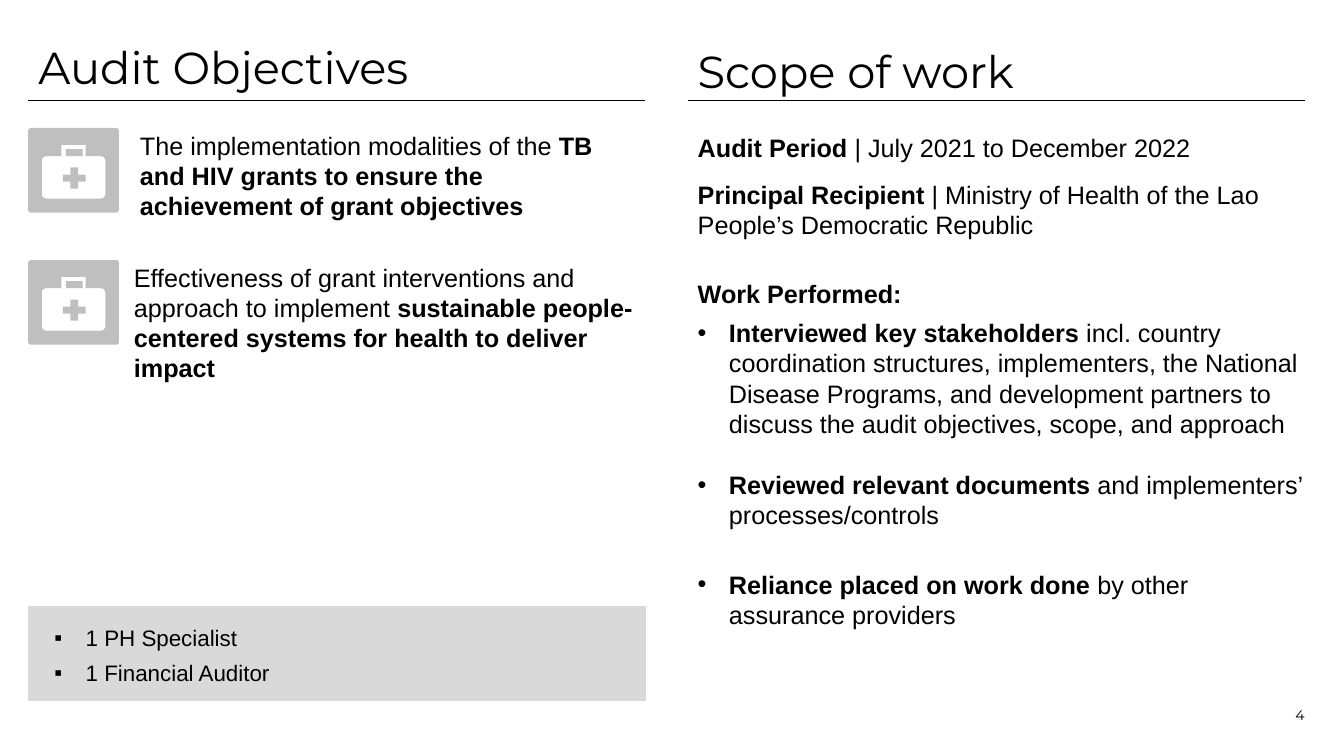
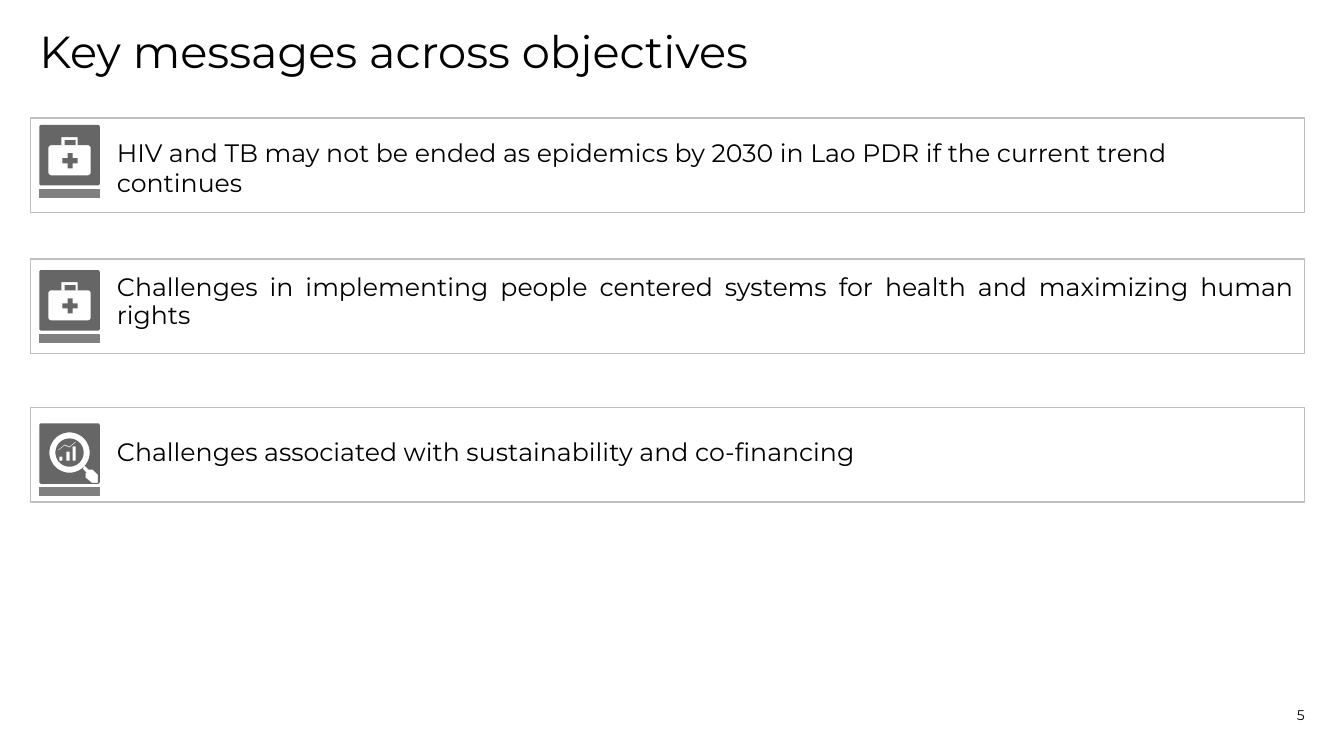
from math import cos, pi, sin

from lxml.etree import SubElement
from pptx import Presentation
from pptx.dml.color import RGBColor
from pptx.enum.shapes import MSO_CONNECTOR, MSO_SHAPE
from pptx.enum.text import MSO_ANCHOR, MSO_AUTO_SIZE, PP_ALIGN
from pptx.oxml.ns import qn
from pptx.util import Emu, Pt

PX = 9144  # EMU per px: 100 px to the inch
ICON_GRID = 60


def color(hex_code):
    return RGBColor.from_string(hex_code)


def px(*lengths):
    return [Emu(length * PX) for length in lengths]


def set_values(target, values):
    for name, value in values.items():
        setattr(target, name, value)


def rectangle(left, top, right, bottom):
    return [(left, top), (right, top), (right, bottom), (left, bottom)]


def arc(x, y, radius, start=0, sweep=360, steps=48):
    angles = [(start + sweep * step / steps) * pi / 180 for step in range(steps + 1)]
    return [(x + radius * cos(angle), y + radius * sin(angle)) for angle in angles]


def rounded(left, top, right, bottom, radius):
    corners = rectangle(left + radius, top + radius, right - radius, bottom - radius)
    return [point for number, (x, y) in enumerate(corners)
            for point in arc(x, y, radius, 180 + 90 * number, 90, 6)]


ICON_FRAME = rounded(0, 0, 60, 60, 2)
MEDICAL_CASE = [
    ICON_FRAME,
    rounded(9, 20, 51, 50, 3),
    rectangle(22, 12, 38, 20),
    rectangle(25, 15, 36, 20),
    [(28, 28), (33, 28), (33, 33), (38, 33), (38, 38), (33, 38),
     (33, 43), (28, 43), (28, 38), (23, 38), (23, 33), (28, 33)],
]
MAGNIFIER = [
    ICON_FRAME,
    arc(30, 29, 20),
    arc(30, 29, 14),
    [(43, 45), (47, 49), (46, 49), (46, 54), (52, 59), (58, 59),
     (58, 51), (53, 46), (49, 46), (45, 42)],
    rectangle(20, 33, 23, 37),
    rectangle(27, 28, 30, 37),
    rectangle(33, 23, 36, 37),
    [(36, 18), (30, 23), (25, 21), (19, 26), (19, 27), (25, 22), (30, 24), (36, 19)],
]


class Slides:
    """Holds the shared style and the slide being filled."""

    black = "000000"
    heading_font = "Montserrat"
    text_font = "Arial"
    heading = {"font": heading_font, "size": 32, "line_spacing": 0.9}
    margins = (10, 5, 10, 5)

    def __init__(self, width, height):
        self.deck = Presentation()
        set_values(self.deck, dict(zip(("slide_width", "slide_height"), px(width, height))))

    def new_page(self, layout, number):
        self.page = self.deck.slides.add_slide(self.deck.slide_layouts[layout])
        self.text((1196, 678, 98, 40), [number], margins=(0, 0, 0, 0),
                  anchor=MSO_ANCHOR.BOTTOM, font=self.heading_font, size=10,
                  alignment=PP_ALIGN.RIGHT)

    def fill_text(self, box, paragraphs, margins=margins, anchor=MSO_ANCHOR.TOP,
                  font=text_font, size=18, **spacing):
        """Fill a box; a paragraph is a string, or a string with its own format.

        Text between double asterisks is bold.
        """
        frame = box.text_frame
        sides = ("margin_left", "margin_top", "margin_right", "margin_bottom")
        set_values(frame, {"word_wrap": True, "auto_size": MSO_AUTO_SIZE.NONE,
                           "vertical_anchor": anchor, **dict(zip(sides, px(*margins)))})
        for number, item in enumerate(paragraphs):
            content, own = (item, {}) if isinstance(item, str) else item
            para = frame.paragraphs[0] if number == 0 else frame.add_paragraph()
            values = {"alignment": PP_ALIGN.LEFT, "line_spacing": 1.0,
                      "space_before": Pt(0), "space_after": Pt(0), **spacing, **own}
            self.bullet(para, values.pop("bullet", None))
            set_values(para, values)
            for part, words in enumerate(content.split("**")):
                if words:
                    span = para.add_run()
                    span.text = words
                    set_values(span.font, {"name": font, "size": Pt(size), "bold": part % 2 == 1})
                    span.font.color.rgb = color(self.black)

    def bullet(self, para, mark):
        properties = para._p.get_or_add_pPr()
        indent = 31 * PX if mark else 0
        properties.set("marL", str(indent))
        properties.set("indent", str(-indent))
        if mark:
            SubElement(properties, qn("a:buChar")).set("char", mark)
        else:
            SubElement(properties, qn("a:buNone"))

    def text(self, place, paragraphs, **style):
        self.fill_text(self.page.shapes.add_textbox(*px(*place)), paragraphs, **style)

    def placeholder(self, index, place, paragraphs, **style):
        """Move a layout placeholder, bring it to the front and fill it."""
        box = self.page.placeholders[index]
        set_values(box, dict(zip(("left", "top", "width", "height"), px(*place))))
        self.page.shapes._spTree.append(box._element)
        self.fill_text(box, paragraphs, **style)

    def title(self, place, words, **style):
        self.placeholder(0, place, [words], **self.heading, **style)

    def panel(self, place, line, fill=None):
        box = self.page.shapes.add_shape(MSO_SHAPE.RECTANGLE, *px(*place))
        box.shadow.inherit = False
        if fill:
            box.fill.solid()
            box.fill.fore_color.rgb = color(fill)
        else:
            box.fill.background()
        box.line.color.rgb = color(line)
        box.line.width = Pt(1)

    def rule(self, left, top, width, line, weight):
        rule = self.page.shapes.add_connector(
            MSO_CONNECTOR.STRAIGHT, *px(left, top, left + width, top))
        rule.line.color.rgb = color(line)
        rule.line.width = Pt(weight)
        SubElement(rule._element.spPr, qn("a:effectLst"))

    def icon(self, place, outlines, fill):
        """Draw nested outlines as one shape, each inner outline cut from the outer."""
        left, top, width, height = place
        builder = None
        for outline in outlines:
            points = [((left + x * width / ICON_GRID) * PX, (top + y * height / ICON_GRID) * PX)
                      for x, y in outline]
            if builder is None:
                builder = self.page.shapes.build_freeform(*points[0], scale=1.0)
            else:
                builder.move_to(*points[0])
            builder.add_line_segments(points[1:], close=True)
        shape = builder.convert_to_shape()
        shape.shadow.inherit = False
        shape.fill.solid()
        shape.fill.fore_color.rgb = color(fill)
        shape.line.fill.background()


def build_objectives_and_scope(slides):
    slides.new_page(3, "4")
    slides.title((28, 40, 612, 40), "Audit Objectives")
    slides.text((682, 44, 612, 40), ["Scope of work"], **slides.heading)
    for left in (28, 682):
        slides.rule(left, 100, 612, slides.black, 0.5)

    objectives = [
        (127, (129, 124, 517, 101), "The implementation modalities of the **TB and HIV grants "
         "to ensure the achievement of grant objectives**"),
        (258, (123, 255, 517, 131), "Effectiveness of grant interventions and approach to implement "
         "**sustainable people-centered systems for health to deliver impact**"),
    ]
    for icon_top, place, words in objectives:
        slides.icon((28, icon_top, 90, 84), MEDICAL_CASE, "BFBFBF")
        slides.text(place, [words])

    slides.panel((28, 602, 612, 93), "D9D9D9", "D9D9D9")
    slides.placeholder(1, (44, 614, 290, 72), ["1 PH Specialist", "1 Financial Auditor"],
                       size=16, bullet="▪", space_after=Pt(6))
    slides.placeholder(2, (682, 126, 623, 507), [
        ("**Audit Period **| July 2021 to December 2022", {"space_after": Pt(12)}),
        "**Principal Recipient **| Ministry of Health of the Lao People’s Democratic Republic",
        ("**Work Performed:**", {"space_before": Pt(28), "space_after": Pt(6)}),
        ("**Interviewed key stakeholders **incl. country coordination structures, implementers, "
         "the National Disease Programs, and development partners to discuss the audit "
         "objectives, scope, and approach", {"bullet": "•"}),
        ("**Reviewed relevant documents **and implementers’ processes/controls",
         {"bullet": "•", "space_before": Pt(22)}),
        ("**Reliance placed on work done **by other assurance providers",
         {"bullet": "•", "space_before": Pt(28)}),
    ])


def build_key_messages(slides):
    slides.new_page(5, "5")
    slides.title((39, 30, 1255, 51), "Key messages across objectives", margins=(0, 0, 0, 0))
    justified = {"alignment": PP_ALIGN.JUSTIFY, "line_spacing": 0.9}
    messages = [
        (117, 121, 124, MEDICAL_CASE, {},
         "HIV and TB may not be ended as epidemics by 2030 in Lao PDR if the current trend continues"),
        (257, 255, 268, MEDICAL_CASE, justified,
         "Challenges in implementing people centered systems for health and maximizing human rights"),
        (404, 405, 420, MAGNIFIER, justified,
         "Challenges associated with sustainability and co-financing"),
    ]
    for panel_top, text_top, icon_top, outlines, spacing, words in messages:
        slides.panel((30, panel_top, 1264, 94), "BFBFBF")
        slides.icon((39, icon_top, 60, 60), outlines, "666666")
        slides.rule(39, icon_top + 68, 60, "808080", 6.5)
        slides.text((96, text_top, 1197, 90), [words], margins=(20, 0, 10, 0),
                    anchor=MSO_ANCHOR.MIDDLE, font=slides.heading_font, **spacing)


def main():
    slides = Slides(1333, 750)
    build_objectives_and_scope(slides)
    build_key_messages(slides)
    slides.deck.save("out.pptx")


if __name__ == "__main__":
    main()
